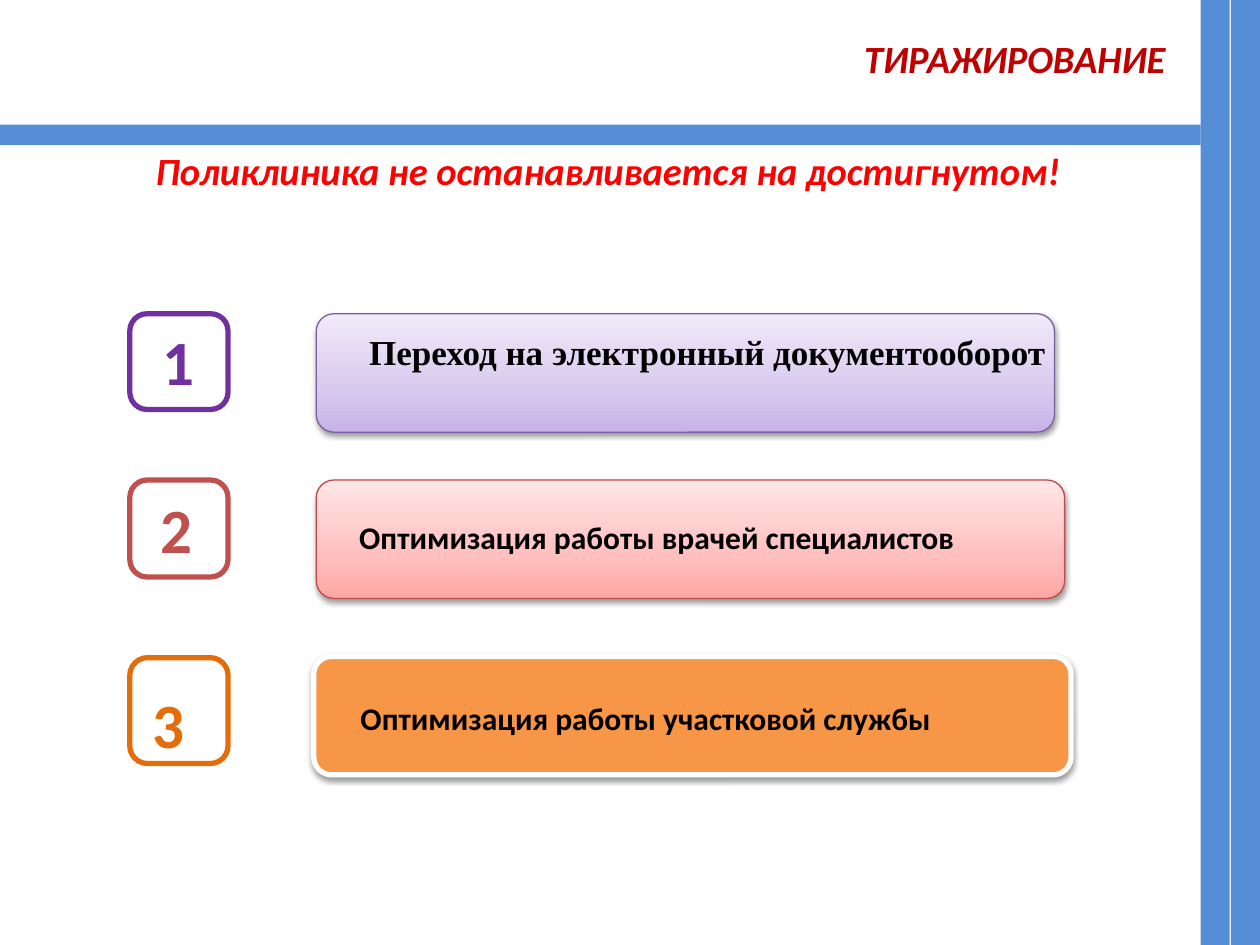
from copy import deepcopy

from lxml.etree import SubElement
from pptx import Presentation
from pptx.dml.color import RGBColor
from pptx.enum.shapes import MSO_SHAPE
from pptx.enum.text import MSO_ANCHOR, PP_ALIGN
from pptx.oxml.ns import qn
from pptx.util import Pt

SCALE = 9144  # EMU per px, 100 px to the inch
RADIUS = 14

BLACK = RGBColor(0x00, 0x00, 0x00)
WHITE = RGBColor(0xFF, 0xFF, 0xFF)
BLUE = RGBColor(0x55, 0x8E, 0xD5)
DARK = RGBColor(0xC0, 0x00, 0x00)
RED = RGBColor(0xFF, 0x00, 0x00)
PURPLE = RGBColor(0x70, 0x30, 0xA0)
BRICK = RGBColor(0xC0, 0x50, 0x4D)
ORANGE = RGBColor(0xE4, 0x6C, 0x0A)
AMBER = RGBColor(0xF7, 0x96, 0x46)
PLUM = RGBColor(0x7D, 0x60, 0xA0)
RUST = RGBColor(0xBE, 0x4B, 0x48)
LILAC = (RGBColor(0xC8, 0xB2, 0xE9), RGBColor(0xD8, 0xC9, 0xEE),
         RGBColor(0xF0, 0xEA, 0xF9))
ROSE = (RGBColor(0xFF, 0xA5, 0xA3), RGBColor(0xFF, 0xBF, 0xBE),
        RGBColor(0xFF, 0xE6, 0xE6))


def px(*nums):
    return [round(n * SCALE) for n in nums]


def write(shape, text, size=22, color=BLACK, font="Calibri", italic=False,
          align=PP_ALIGN.LEFT, inset=(0, 0, 0, 0)):
    """Put bold text in a shape; inset is left, top, right, bottom."""
    frame = shape.text_frame
    frame.word_wrap = True
    frame.vertical_anchor = MSO_ANCHOR.TOP
    (frame.margin_left, frame.margin_top,
     frame.margin_right, frame.margin_bottom) = px(*inset)
    para = frame.paragraphs[0]
    para.alignment = align
    run = para.add_run()
    run.text = text
    run.font.name, run.font.size = font, Pt(size)
    run.font.bold, run.font.italic = True, italic
    run.font.color.rgb = color


def blend(shape, colors):
    """Fill upwards through three colors."""
    fill = shape.fill
    fill.gradient()
    fill.gradient_angle = 90
    stops = shape.element.spPr.find(".//" + qn("a:gsLst"))
    stops.insert(1, deepcopy(stops[0]))
    for stop, place, color in zip(fill.gradient_stops, (0, 0.35, 1), colors):
        stop.position = place
        stop.color.rgb = color


def shade(shape):
    """Cast a soft shadow straight down."""
    effects = shape.element.spPr.find(qn("a:effectLst"))
    outer = SubElement(effects, qn("a:outerShdw"), blurRad=str(Pt(3)),
                       dist=str(Pt(1.6)), dir="5400000", rotWithShape="0")
    tint = SubElement(outer, qn("a:srgbClr"), val="000000")
    SubElement(tint, qn("a:alpha"), val="38000")


class Deck:
    def __init__(self, wide, high):
        self.show = Presentation()
        self.show.slide_width, self.show.slide_height = px(wide, high)
        self.slide = self.show.slides.add_slide(self.show.slide_layouts[6])

    def bar(self, *box):
        bar = self.slide.shapes.add_shape(MSO_SHAPE.RECTANGLE, *px(*box))
        bar.shadow.inherit = False
        bar.fill.solid()
        bar.fill.fore_color.rgb = BLUE
        bar.line.fill.background()

    def title(self, text, box, color, align):
        shape = self.slide.shapes.add_textbox(*px(*box))
        write(shape, text, color=color, italic=True, align=align,
              inset=(5, 5, 5, 5))

    def panel(self, box, fill, line, weight):
        panel = self.slide.shapes.add_shape(MSO_SHAPE.ROUNDED_RECTANGLE,
                                            *px(*box))
        panel.shadow.inherit = False
        panel.adjustments[0] = round(RADIUS / min(box[2:]), 2)
        if isinstance(fill, RGBColor):
            panel.fill.solid()
            panel.fill.fore_color.rgb = fill
        else:
            blend(panel, fill)
        panel.line.color.rgb = line
        panel.line.width = Pt(weight)
        return panel

    def badge(self, text, top, high, color, inset):
        shape = self.panel((103, top, 78, high), WHITE, color, 3)
        write(shape, text, size=36, color=color, inset=(*inset, 0, 0))

    def card(self, text, box, fill, line, weight, inset, **form):
        shape = self.panel(box, fill, line, weight)
        shade(shape)
        write(shape, text, inset=(*inset, 0, 0), **form)


def main():
    deck = Deck(1000, 750)
    deck.title("ТИРАЖИРОВАНИЕ", (266, 23, 664, 46), DARK, PP_ALIGN.RIGHT)
    deck.title("Поликлиника не останавливается на достигнутом!",
               (12, 112, 941, 46), RED, PP_ALIGN.CENTER)

    deck.card("Переход на электронный документооборот", (251, 249, 586, 94),
              LILAC, PLUM, 0.75, (38, 9), size=20, font="Times New Roman")
    deck.card("Оптимизация работы врачей специалистов", (251, 381, 594, 94),
              ROSE, RUST, 0.75, (30, 26), size=18)
    deck.card("Оптимизация работы участковой службы", (249, 521, 601, 94),
              AMBER, WHITE, 3, (33, 30), size=18)

    deck.badge("1", 249, 76, PURPLE, (22, 3))
    deck.badge("2", 381, 77, BRICK, (20, 4))
    deck.badge("3", 522, 84, ORANGE, (14, 18))

    deck.bar(0, 99, 953, 16)
    for left in (953, 977):
        deck.bar(left, 0, 23, 750)
    deck.show.save("out.pptx")


if __name__ == "__main__":
    main()
